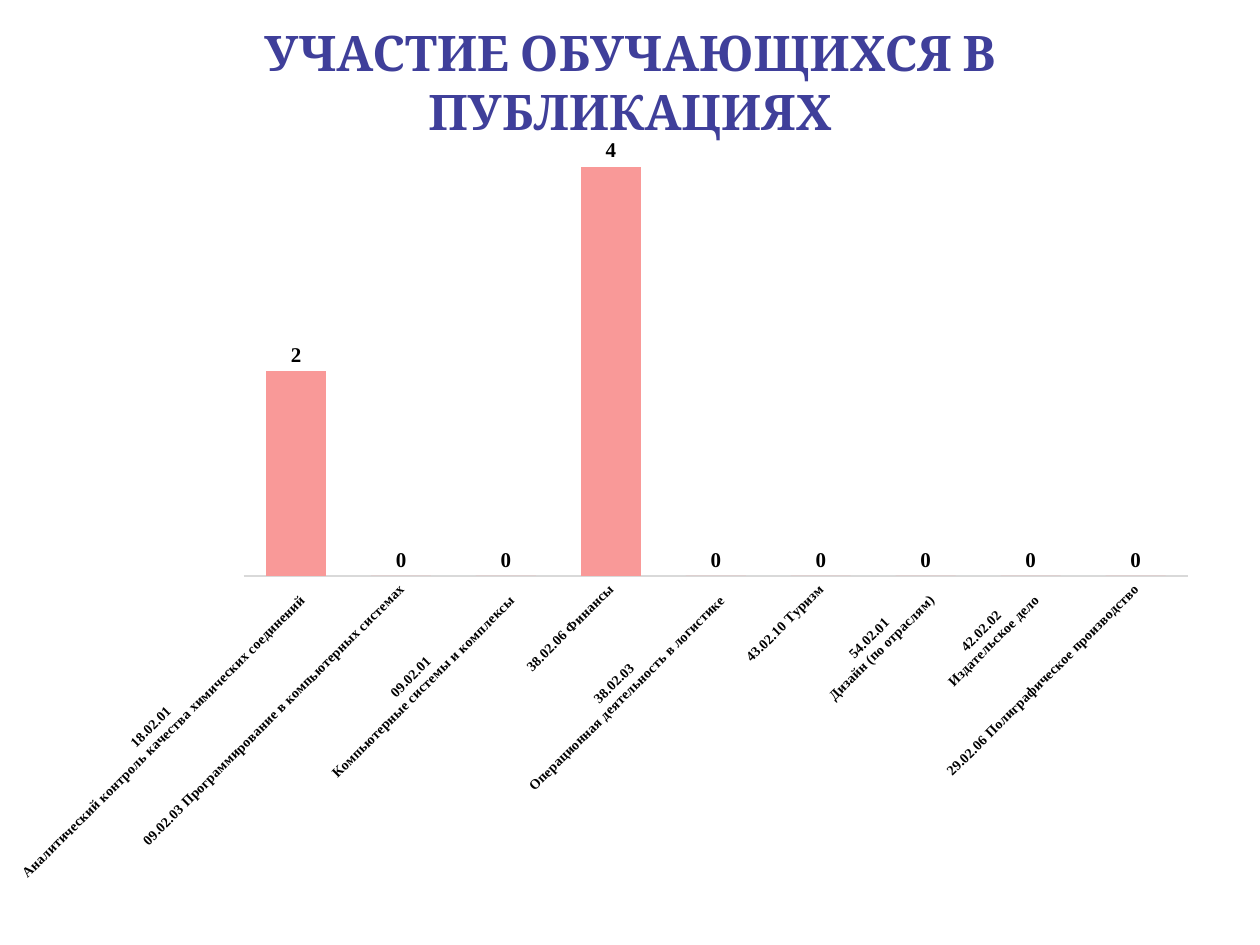
from lxml.etree import SubElement, fromstring
from pptx import Presentation
from pptx.chart.data import CategoryChartData
from pptx.dml.color import RGBColor
from pptx.enum.chart import XL_CHART_TYPE as ChartType
from pptx.enum.chart import XL_LABEL_POSITION as LabelPos
from pptx.enum.chart import XL_TICK_MARK as TickMark
from pptx.enum.text import MSO_ANCHOR, PP_ALIGN
from pptx.oxml import parse_xml
from pptx.oxml.ns import nsdecls
from pptx.util import Pt

TITLE = "УЧАСТИЕ ОБУЧАЮЩИХСЯ В ПУБЛИКАЦИЯХ"
PUBLICATIONS = [
    ("18.02.01 \nАналитический контроль качества химических соединений", 2),
    ("09.02.03 Программирование в компьютерных системах", 0),
    ("09.02.01 \nКомпьютерные системы и комплексы", 0),
    ("38.02.06 Финансы", 4),
    ("38.02.03 \nОперационная деятельность в логистике", 0),
    ("43.02.10 Туризм", 0),
    ("54.02.01 \nДизайн (по отраслям)", 0),
    ("42.02.02 \nИздательское дело", 0),
    ("29.02.06 Полиграфическое производство", 0),
]
PLOT = {"x": 0.21, "y": 0.09, "w": 0.77, "h": 0.51}
INDIGO = RGBColor(0x3F, 0x3F, 0x9A)
MAUVE = RGBColor(0xA5, 0x85, 0xB1)
CORAL = RGBColor(0xF9, 0x99, 0x98)
GREY = RGBColor(0xD9, 0xD9, 0xD9)
BLACK = RGBColor(0, 0, 0)


def style(font, size, color, name="Times New Roman", bold=True):
    font.name, font.size, font.bold = name, Pt(size), bold
    font.color.rgb = color


def add_title(s):
    tf = s.shapes.add_textbox(Pt(36), Pt(9.4), Pt(648), Pt(90)).text_frame
    tf.word_wrap = True
    tf.vertical_anchor = MSO_ANCHOR.TOP
    p = tf.paragraphs[0]
    p.text = TITLE
    p.alignment = PP_ALIGN.CENTER
    r = p.runs[0]
    style(r.font, 28, INDIGO, "Cambria")
    r.font._element.insert(0, parse_xml(
        f'<a:ln {nsdecls("a")} w="{Pt(2.25)}"><a:solidFill>'
        f'<a:srgbClr val="{MAUVE}"/></a:solidFill></a:ln>'))


def set_plot_area(chart):
    plot_area = chart._chartSpace.chart.plotArea
    for old in plot_area.xpath("c:layout"):
        plot_area.remove(old)
    modes = '<c:layoutTarget val="inner"/><c:xMode val="edge"/><c:yMode val="edge"/>'
    parts = "".join(f'<c:{k} val="{v}"/>' for k, v in PLOT.items())
    plot_area.insert(0, parse_xml(
        f'<c:layout {nsdecls("c")}><c:manualLayout>{modes}{parts}'
        '</c:manualLayout></c:layout>'))


def add_publications_chart(s):
    data = CategoryChartData()
    data.categories = [name for name, _ in PUBLICATIONS]
    data.add_series("Series 1", [count for _, count in PUBLICATIONS])
    chart = s.shapes.add_chart(ChartType.COLUMN_CLUSTERED, Pt(-8), Pt(54),
                               Pt(701), Pt(458.6), data).chart
    chart.has_legend = chart.has_title = False
    style(chart.font, 10, BLACK, bold=False)

    value_axis = chart.value_axis
    value_axis.minimum_scale, value_axis.maximum_scale = 0, 4
    value_axis.has_major_gridlines = False
    value_axis.visible = False

    axis = chart.category_axis
    axis.major_tick_mark = axis.minor_tick_mark = TickMark.NONE
    axis.format.line.color.rgb = GREY
    axis.format.line.width = Pt(1)
    style(axis.tick_labels.font, 8, BLACK)
    axis._element.txPr.bodyPr.set("rot", str(-45 * 60000))

    plot = chart.plots[0]
    plot.gap_width = 75
    plot.vary_by_categories = False
    series = plot.series[0]
    series.format.fill.solid()
    series.format.fill.fore_color.rgb = CORAL
    labels = series.data_labels
    labels.show_value = True
    labels.position = LabelPos.OUTSIDE_END
    style(labels.font, 12, BLACK)
    set_plot_area(chart)


def main():
    prs = Presentation()
    prs.slide_width, prs.slide_height = Pt(720), Pt(540)
    s = prs.slides.add_slide(prs.slide_layouts[6])
    add_title(s)
    add_publications_chart(s)
    prs.save("out.pptx")


if __name__ == "__main__":
    main()
